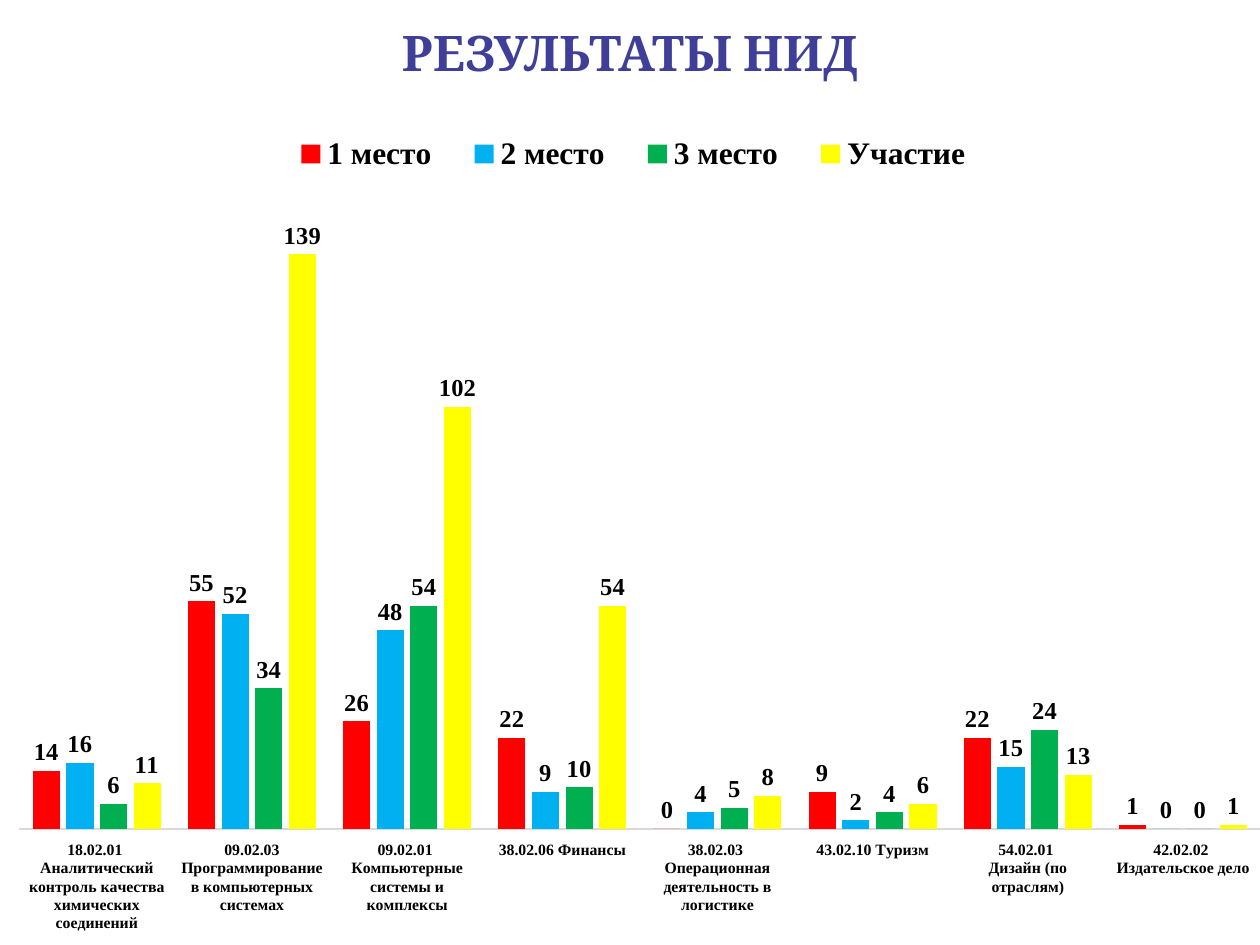
from lxml import etree
from pptx import Presentation
from pptx.chart.data import CategoryChartData
from pptx.dml.color import RGBColor
from pptx.enum.chart import (XL_CHART_TYPE, XL_LABEL_POSITION,
                             XL_LEGEND_POSITION, XL_TICK_LABEL_POSITION, XL_TICK_MARK)
from pptx.enum.text import MSO_ANCHOR, PP_ALIGN
from pptx.oxml.ns import qn
from pptx.util import Cm, Pt

CLUSTERED = XL_CHART_TYPE.COLUMN_CLUSTERED
OUTSIDE_END = XL_LABEL_POSITION.OUTSIDE_END
LEGEND_TOP = XL_LEGEND_POSITION.TOP
LABELS_LOW = XL_TICK_LABEL_POSITION.LOW
NO_TICKS = XL_TICK_MARK.NONE
TOP = MSO_ANCHOR.TOP
CENTER = PP_ALIGN.CENTER

INDIGO = RGBColor(0x3F, 0x3F, 0x9A)
BLACK = RGBColor(0, 0, 0)
AXIS_GRAY = RGBColor(0xD9, 0xD9, 0xD9)
RED = RGBColor(0xFF, 0, 0)
BLUE = RGBColor(0, 0xB0, 0xF0)
GREEN = RGBColor(0, 0xB0, 0x50)
YELLOW = RGBColor(0xFF, 0xFF, 0)

SPECIALTIES = [
    "18.02.01 \nАналитический контроль качества химических соединений",
    "09.02.03 Программирование в компьютерных системах",
    "09.02.01 \nКомпьютерные системы и комплексы",
    "38.02.06 Финансы",
    "38.02.03 \nОперационная деятельность в логистике",
    "43.02.10 Туризм",
    "54.02.01 \nДизайн (по отраслям)",
    "42.02.02 \nИздательское дело",
]
RESULTS = [
    ("1 место", RED, (14, 55, 26, 22, 0, 9, 22, 1)),
    ("2 место", BLUE, (16, 52, 48, 9, 4, 2, 15, 0)),
    ("3 место", GREEN, (6, 34, 54, 10, 5, 4, 24, 0)),
    ("Участие", YELLOW, (11, 139, 102, 54, 8, 6, 13, 1)),
]


def set_font(font, size, color=BLACK, name="Times New Roman"):
    for attribute, value in {"size": Pt(size), "name": name, "bold": True}.items():
        setattr(font, attribute, value)
    font.color.rgb = color


def set_layout(parent, before, settings):
    """Give a chart part a manual layout, placed ahead of the first child named in before."""
    for old in parent.findall(qn("c:layout")):
        parent.remove(old)
    layout = etree.Element(qn("c:layout"))
    manual = etree.SubElement(layout, qn("c:manualLayout"))
    for tag, value in settings.items():
        etree.SubElement(manual, qn(f"c:{tag}")).set("val", str(value))
    next(child for child in parent if child.tag in map(qn, before)).addprevious(layout)


prs = Presentation()
prs.slide_width, prs.slide_height = Cm(25.4), Cm(19.05)
slide = prs.slides.add_slide(prs.slide_layouts[6])

# Chart
results_data = CategoryChartData()
results_data.categories = SPECIALTIES
for place, _, counts in RESULTS:
    results_data.add_series(place, counts)
chart = slide.shapes.add_chart(CLUSTERED, Cm(0), Cm(1.93), Cm(25.8), Cm(16.87),
                               results_data).chart
chart.has_title = False
set_font(chart.font, 8.5)

columns = chart.plots[0]
columns.gap_width = 100
columns.overlap = -24
columns.vary_by_categories = False
for series, (_, color, _) in zip(columns.series, RESULTS):
    series.format.fill.solid()
    series.format.fill.fore_color.rgb = color
    series.invert_if_negative = False
    labels = series.data_labels
    labels.show_value = True
    labels.position = OUTSIDE_END
    set_font(labels.font, 14)

specialty_axis = chart.category_axis
specialty_axis.major_tick_mark = NO_TICKS
specialty_axis.minor_tick_mark = NO_TICKS
specialty_axis.tick_label_position = LABELS_LOW
specialty_axis.format.line.color.rgb = AXIS_GRAY
specialty_axis.format.line.width = Pt(1)
set_font(specialty_axis.tick_labels.font, 9)

count_axis = chart.value_axis
count_axis.visible = False
count_axis.has_major_gridlines = False
count_axis.minimum_scale, count_axis.maximum_scale = 0, 160

chart.has_legend = True
legend = chart.legend
legend.position = LEGEND_TOP
legend.include_in_layout = False
set_font(legend.font, 18)

edges = {"xMode": "edge", "yMode": "edge"}
set_layout(legend._element, ["c:overlay"],
           edges | {"x": 0.21, "y": 0.04, "w": 0.57, "h": 0.06})
set_layout(chart._chartSpace.chart.plotArea, ["c:barChart"],
           {"layoutTarget": "inner"} | edges
           | {"x": 0.015, "y": 0.086, "w": 0.97, "h": 0.794})

# Title
title_frame = slide.shapes.add_textbox(Cm(1.27), Cm(0.33), Cm(22.86), Cm(3.18)).text_frame
title_frame.word_wrap = True
title_frame.vertical_anchor = TOP
heading = title_frame.paragraphs[0]
heading.alignment = CENTER
heading_run = heading.add_run()
heading_run.text = "РЕЗУЛЬТАТЫ НИД"
set_font(heading_run.font, 28, INDIGO, "Cambria")

prs.save("out.pptx")
